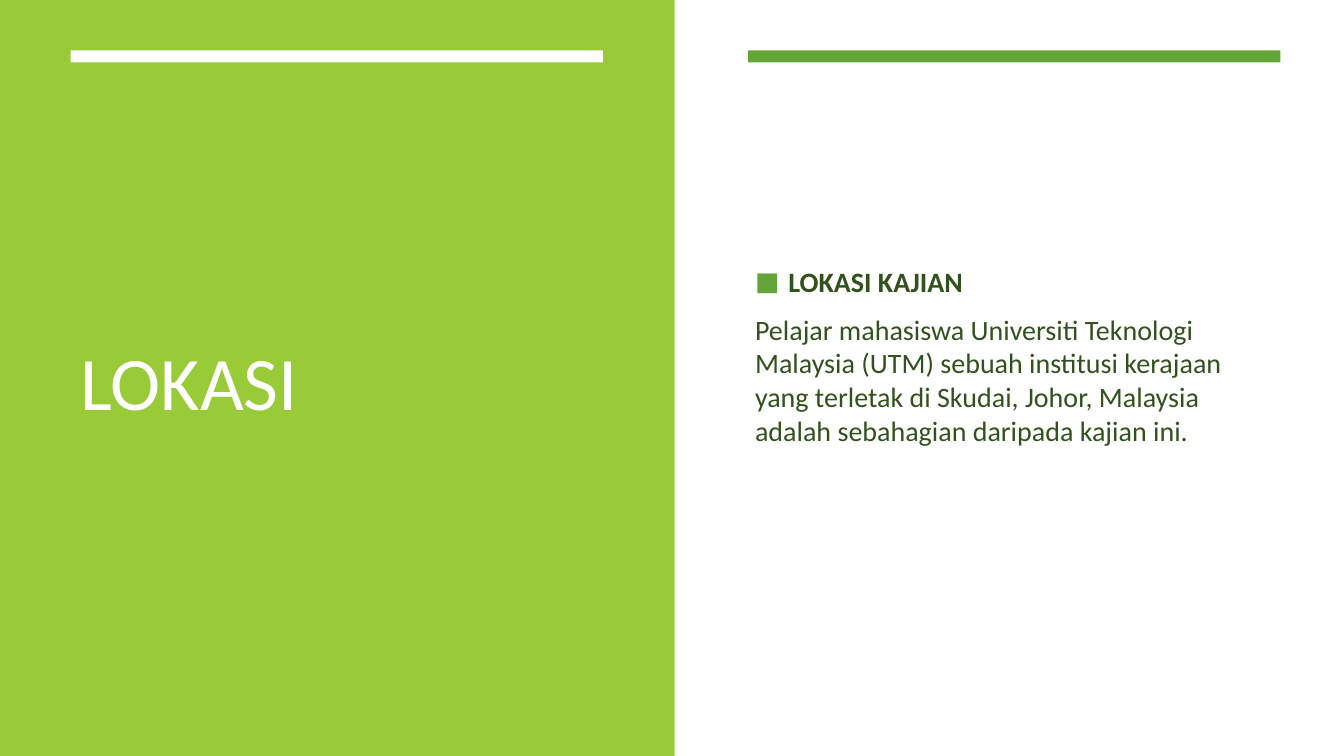
import pptx
import pptx.util
import pptx.dml.color
import pptx.enum.shapes
import pptx.enum.text
import pptx.oxml.ns
from lxml import etree

Inches = pptx.util.Inches
Pt = pptx.util.Pt

WHITE = "FFFFFF"
LIME = "99CB38"
GREEN = "63A537"
DARK = "31521C"


def color(code):
    return pptx.dml.color.RGBColor.from_string(code)


def place(shape, left, top, width, height):
    shape.left, shape.top = Inches(left), Inches(top)
    shape.width, shape.height = Inches(width), Inches(height)


def add_rect(slide, left, top, width, height, fill):
    rect = slide.shapes.add_shape(
        pptx.enum.shapes.MSO_SHAPE.RECTANGLE,
        Inches(left), Inches(top), Inches(width), Inches(height))
    rect.shadow.inherit = False
    rect.fill.solid()
    rect.fill.fore_color.rgb = color(fill)
    rect.line.fill.background()


def set_frame(shape):
    frame = shape.text_frame
    frame.word_wrap = True
    frame.auto_size = pptx.enum.text.MSO_AUTO_SIZE.NONE
    frame.vertical_anchor = pptx.enum.text.MSO_ANCHOR.MIDDLE
    return frame


def write(para, text, size=20, fill=DARK, bold=False, before=0, after=0):
    para.alignment = pptx.enum.text.PP_ALIGN.LEFT
    para.space_before, para.space_after = Pt(before), Pt(after)
    run = para.add_run()
    run.text = text
    run.font.name = "Calibri"
    run.font.size = Pt(size)
    run.font.bold = bold
    run.font.color.rgb = color(fill)


def add_bullet(para, mark, fill, scale, indent):
    props = para._p.get_or_add_pPr()
    props.set("marL", str(Inches(indent)))
    props.set("indent", str(-Inches(indent)))
    qn = pptx.oxml.ns.qn
    tint = etree.SubElement(props, qn("a:buClr"))
    etree.SubElement(tint, qn("a:srgbClr"), val=fill)
    etree.SubElement(props, qn("a:buSzPct"), val=str(scale * 1000))
    etree.SubElement(props, qn("a:buFont"), typeface="Calibri")
    etree.SubElement(props, qn("a:buChar"), char=mark)


def add_title(slide, text):
    title = slide.shapes.title
    place(title, 0.7, 1.13, 5.28, 5.28)
    write(set_frame(title).paragraphs[0], text, size=54, fill=WHITE)
    # Bring the title in front of the panel
    slide.shapes.element.append(title.element)


def add_body(slide, head, text):
    box = slide.shapes.add_textbox(
        Inches(7.39), Inches(1.13), Inches(5.31), Inches(5.28))
    frame = set_frame(box)
    # The deeper bottom margin lifts the text above the middle
    frame.margin_bottom = Inches(0.53)
    first = frame.paragraphs[0]
    write(first, head, bold=True, before=4, after=6)
    add_bullet(first, "■", GREEN, 92, 0.33)
    write(frame.add_paragraph(), text, before=4, after=6)


def main():
    deck = pptx.Presentation()
    deck.slide_width, deck.slide_height = Inches(13.33), Inches(7.5)
    slide = deck.slides.add_slide(deck.slide_layouts[5])
    slide.background.fill.solid()
    slide.background.fill.fore_color.rgb = color(WHITE)

    # Left panel and the two top bars
    add_rect(slide, 0, 0, 6.69, 7.5, LIME)
    for left, fill in ((0.7, WHITE), (7.42, GREEN)):
        add_rect(slide, left, 0.5, 5.28, 0.12, fill)

    # Text
    add_title(slide, "LOKASI")
    add_body(
        slide, "LOKASI KAJIAN",
        "Pelajar mahasiswa Universiti Teknologi Malaysia (UTM) sebuah "
        "institusi kerajaan yang terletak di Skudai, Johor, Malaysia "
        "adalah sebahagian daripada kajian ini.")
    deck.save("out.pptx")


if __name__ == "__main__":
    main()
